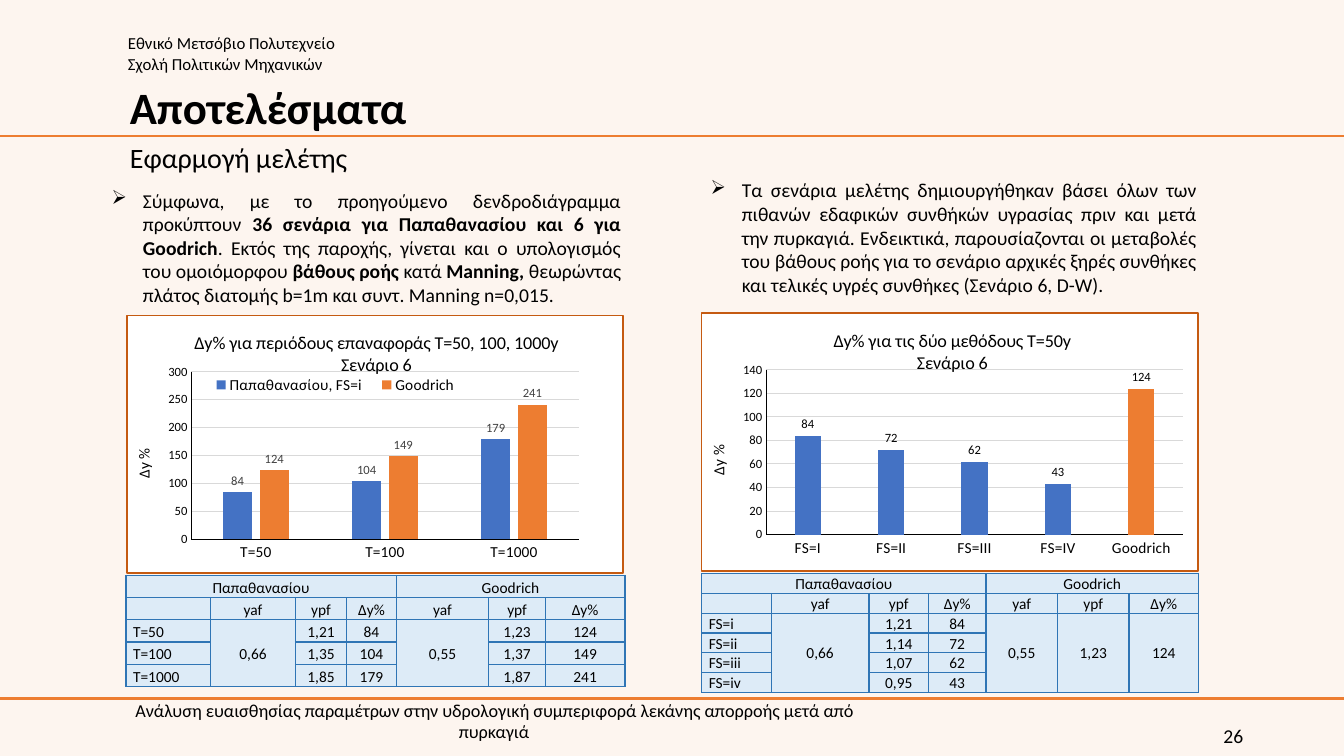
from dataclasses import dataclass

from lxml import etree
from pptx import Presentation
from pptx.chart.data import CategoryChartData
from pptx.dml.color import RGBColor
from pptx.enum import chart as kinds, shapes, text
from pptx.oxml import ns
from pptx.util import Inches, Pt


@dataclass(frozen=True)
class Theme:
    font: str = "Calibri"
    background: str = "FDF5EF"
    ink: str = "000000"
    soft_ink: str = "404040"
    blue: str = "4472C4"
    orange: str = "ED7D31"
    chart_fill: str = "FFFFFF"
    chart_border: str = "C55A11"
    grid: str = "D9D9D9"
    cell_fill: str = "DDEBF7"
    cell_border: str = "2F75B5"
    title: int = 32
    subtitle: int = 20
    body: int = 14
    caption: int = 13
    small: int = 12
    table: int = 11
    tick: int = 9


def add_node(parent, tag, **attributes):
    return etree.SubElement(parent, ns.qn(tag), attributes)


def add_outline(parent, tag, color, width):
    line = add_node(parent, tag, w=str(Pt(width)))
    add_node(add_node(line, "a:solidFill"), "a:srgbClr", val=color)


def place(chart, route, index, box, inner=False):
    parent = chart._chartSpace.xpath(route)[0]
    layout = parent.find(ns.qn("c:layout"))
    if layout is None:
        layout = etree.Element(ns.qn("c:layout"))
        parent.insert(index, layout)
    manual = add_node(layout, "c:manualLayout")
    if inner:
        add_node(manual, "c:layoutTarget", val="inner")
    for side in "xy":
        add_node(manual, f"c:{side}Mode", val="edge")
    for side, value in zip("xywh", box):
        add_node(manual, f"c:{side}", val=str(value))


class Slide:
    def __init__(self, page, theme):
        self.page = page
        self.theme = theme
        page.background.fill.solid()
        page.background.fill.fore_color.rgb = RGBColor.from_string(theme.background)

    def style(self, font, size, color=None, bold=False):
        font.name = self.theme.font
        font.size = Pt(size)
        font.bold = bold
        font.color.rgb = RGBColor.from_string(color or self.theme.ink)

    def text(self, area, paragraphs, size, align=text.PP_ALIGN.LEFT,
             anchor=text.MSO_ANCHOR.TOP, bold=False, bullet=False, spacing=None):
        frame = self.page.shapes.add_textbox(*map(Inches, area)).text_frame
        frame.word_wrap = True
        frame.vertical_anchor = anchor
        for index, spans in enumerate(paragraphs):
            para = frame.add_paragraph() if index else frame.paragraphs[0]
            para.alignment = align
            para.line_spacing = spacing
            if bullet:
                properties = para._p.get_or_add_pPr()
                properties.set("marL", str(Inches(0.31)))
                properties.set("indent", str(-Inches(0.31)))
                add_node(properties, "a:buFont", typeface="Wingdings")
                add_node(properties, "a:buChar", char="Ø")
            for position, content in enumerate(spans):
                span = para.add_run()
                span.text = content
                self.style(span.font, size, bold=bold or position % 2 == 1)

    def rule(self, top):
        line = self.page.shapes.add_connector(
            shapes.MSO_CONNECTOR.STRAIGHT, 0, Inches(top), Inches(13.33), Inches(top))
        line.line.color.rgb = RGBColor.from_string(self.theme.orange)
        line.line.width = Pt(1.5)
        add_node(line._element.spPr, "a:effectLst")

    def chart(self, area, title, title_spot, categories, series, plot_area, top_value, step,
              label_color, legend_area=None, highlight=None):
        theme = self.theme
        data = CategoryChartData(number_format="0")
        data.categories = categories
        for name, values in series:
            data.add_series(name, values)
        chart = self.page.shapes.add_chart(
            kinds.XL_CHART_TYPE.COLUMN_CLUSTERED, *map(Inches, area), data).chart
        self.style(chart.font, 10)
        frame = etree.Element(ns.qn("c:spPr"))
        add_node(add_node(frame, "a:solidFill"), "a:srgbClr", val=theme.chart_fill)
        add_outline(frame, "a:ln", theme.chart_border, 1.25)
        chart._chartSpace.chart.addnext(frame)

        values_axis, names_axis = chart.value_axis, chart.category_axis
        values_axis.minimum_scale, values_axis.maximum_scale = 0, top_value
        values_axis.major_unit = step
        grid = values_axis.major_gridlines.format.line
        grid.color.rgb = RGBColor.from_string(theme.grid)
        grid.width = Pt(0.75)
        for axis, size in ((values_axis, theme.tick), (names_axis, theme.table)):
            axis.major_tick_mark = kinds.XL_TICK_MARK.NONE
            axis.format.line.color.rgb = RGBColor.from_string(theme.ink)
            axis.format.line.width = Pt(0.75)
            self.style(axis.tick_labels.font, size)
        for holder, words, size in ((chart.chart_title, title, theme.caption),
                                    (values_axis.axis_title, "Δy %", theme.table)):
            holder.text_frame.text = words
            for para in holder.text_frame.paragraphs:
                self.style(para.runs[0].font, size)

        plot = chart.plots[0]
        plot.gap_width, plot.overlap = 219, -27
        plot.vary_by_categories = False
        for bars, color in zip(plot.series, (theme.blue, theme.orange)):
            bars.format.fill.solid()
            bars.format.fill.fore_color.rgb = RGBColor.from_string(color)
            labels = bars.data_labels
            labels.show_value = True
            labels.position = kinds.XL_LABEL_POSITION.OUTSIDE_END
            labels.number_format, labels.number_format_is_linked = "0", False
            self.style(labels.font, theme.tick, label_color)
        if highlight is not None:
            fill = plot.series[0].points[highlight].format.fill
            fill.solid()
            fill.fore_color.rgb = RGBColor.from_string(theme.orange)

        chart.has_legend = legend_area is not None
        if chart.has_legend:
            chart.legend.position = kinds.XL_LEGEND_POSITION.RIGHT
            chart.legend.include_in_layout = False
            self.style(chart.legend.font, theme.table)
            place(chart, "c:chart/c:legend", 1, legend_area)
        place(chart, "c:chart/c:title", 1, title_spot)
        place(chart, "c:chart/c:plotArea", 0, plot_area, inner=True)

    def table(self, left, top, widths, row_height, body, merged_columns):
        theme = self.theme
        rows = [["Παπαθανασίου", "", "", "", "Goodrich", "", ""],
                ["", "yaf", "ypf", "Δy%", "yaf", "ypf", "Δy%"], *body]
        table = self.page.shapes.add_table(
            len(rows), len(widths), Inches(left), Inches(top),
            Inches(sum(widths)), Inches(row_height * len(rows))).table
        table.first_row = table.horz_banding = False
        for column, width in zip(table.columns, widths):
            column.width = Inches(width)
        for row_index, row in enumerate(rows):
            table.rows[row_index].height = Inches(row_height)
            for column_index, content in enumerate(row):
                cell = table.cell(row_index, column_index)
                merged = row_index > 1 and column_index in merged_columns
                self.cell(cell, content, column_index == 0 and row_index > 1, merged)
        table.cell(0, 0).merge(table.cell(0, 3))
        table.cell(0, 4).merge(table.cell(0, 6))
        for column_index in merged_columns:
            table.cell(2, column_index).merge(table.cell(len(rows) - 1, column_index))

    def cell(self, cell, content, is_label, merged):
        theme = self.theme
        cell.margin_left = cell.margin_right = Inches(0.07)
        cell.margin_top = cell.margin_bottom = 0
        cell.vertical_anchor = text.MSO_ANCHOR.MIDDLE if merged else text.MSO_ANCHOR.BOTTOM
        para = cell.text_frame.paragraphs[0]
        para.alignment = text.PP_ALIGN.LEFT if is_label else text.PP_ALIGN.CENTER
        para.line_spacing = 1.07
        if content:
            para.text = content
            self.style(para.runs[0].font, theme.table)
        else:
            add_node(para._p, "a:endParaRPr", sz=str(theme.table * 100))
        for side in "LRTB":
            add_outline(cell._tc.get_or_add_tcPr(), f"a:ln{side}", theme.cell_border, 1)
        cell.fill.solid()
        cell.fill.fore_color.rgb = RGBColor.from_string(theme.cell_fill)


def main():
    deck = Presentation()
    deck.slide_width, deck.slide_height = Inches(13.33), Inches(7.5)
    theme = Theme()
    slide = Slide(deck.slides.add_slide(deck.slide_layouts[6]), theme)
    align, middle = text.PP_ALIGN, text.MSO_ANCHOR.MIDDLE

    slide.text((1.17, 0.28, 4.32, 0.5),
               [["Εθνικό Μετσόβιο Πολυτεχνείο"], ["Σχολή Πολιτικών Μηχανικών"]], theme.small)
    for top in (6.93, 1.35):
        slide.rule(top)
    slide.text((9.43, 7.1, 3, 0.4), [["26"]], theme.body, align.RIGHT, middle)

    slide.chart((6.95, 3.1, 4.94, 2.57), "Δy% για τις δύο μεθόδους Τ=50y\nΣενάριο 6",
                (0.26, 0.05), ["FS=Ι", "FS=ΙI", "FS=ΙII", "FS=ΙV", "Goodrich"],
                [("Series 1", (84, 72, 62, 43, 124))], (0.13, 0.22, 0.84, 0.64), 140, 20,
                theme.ink, highlight=4)
    slide.table(6.96, 5.69, (0.69, 0.97, 0.59, 0.57, 0.71, 0.71, 0.69), 0.19,
                [["FS=i", "0,66", "1,21", "84", "0,55", "1,23", "124"],
                 ["FS=ii", "", "1,14", "72", "", "", ""],
                 ["FS=iii", "", "1,07", "62", "", "", ""],
                 ["FS=iv", "", "0,95", "43", "", "", ""]], (1, 4, 5, 6))

    slide.chart((1.25, 3.12, 4.94, 2.57),
                "Δy% για περιόδους επαναφοράς Τ=50, 100, 1000y\nΣενάριο 6",
                (0.13, 0.05), ["T=50", "T=100", "T=1000"],
                [("Παπαθανασίου, FS=i", (84, 104, 179)), ("Goodrich", (124, 149, 241))],
                (0.13, 0.22, 0.78, 0.65), 300, 50, theme.soft_ink,
                legend_area=(0.15, 0.22, 0.54, 0.1))
    slide.table(1.25, 5.71, (0.84, 0.84, 0.51, 0.49, 0.92, 0.56, 0.79), 0.22,
                [["T=50", "0,66", "1,21", "84", "0,55", "1,23", "124"],
                 ["T=100", "", "1,35", "104", "", "1,37", "149"],
                 ["T=1000", "", "1,85", "179", "", "1,87", "241"]], (1, 4))

    slide.text((1.01, 1.82, 5.25, 1.28), [[
        "Σύμφωνα, με το προηγούμενο δενδροδιάγραμμα προκύπτουν ",
        "36 σενάρια για Παπαθανασίου και 6 για Goodrich",
        ". Εκτός της παροχής, γίνεται και ο υπολογισμός του ομοιόμορφου ",
        "βάθους ροής ", "κατά ", "Manning, ",
        "θεωρώντας πλάτος διατομής b=1m και συντ. Manning n=0,015."]],
        theme.body, align.JUSTIFY, bullet=True)
    slide.text((6.95, 1.72, 5.02, 1.28), [[
        "Τα σενάρια μελέτης δημιουργήθηκαν βάσει όλων των πιθανών εδαφικών συνθήκών υγρασίας "
        "πριν και μετά την πυρκαγιά. Ενδεικτικά, παρουσίαζονται οι μεταβολές του βάθους ροής "
        "για το σενάριο αρχικές ξηρές συνθήκες και τελικές υγρές συνθήκες (Σενάριο 6, D-W)."]],
        theme.body, align.JUSTIFY, bullet=True)
    slide.text((1.19, 0.61, 5.8, 0.96), [["Αποτελέσματα"]], theme.title,
               anchor=middle, bold=True, spacing=0.9)
    slide.text((1.19, 1.34, 2.75, 0.77), [["Εφαρμογή μελέτης"]], theme.subtitle)
    slide.text((0.89, 6.95, 8.02, 0.4), [[
        "Ανάλυση ευαισθησίας παραμέτρων στην υδρολογική συμπεριφορά λεκάνης απορροής "
        "μετά από πυρκαγιά"]], theme.caption, align.CENTER, middle)
    deck.save("out.pptx")


if __name__ == "__main__":
    main()
